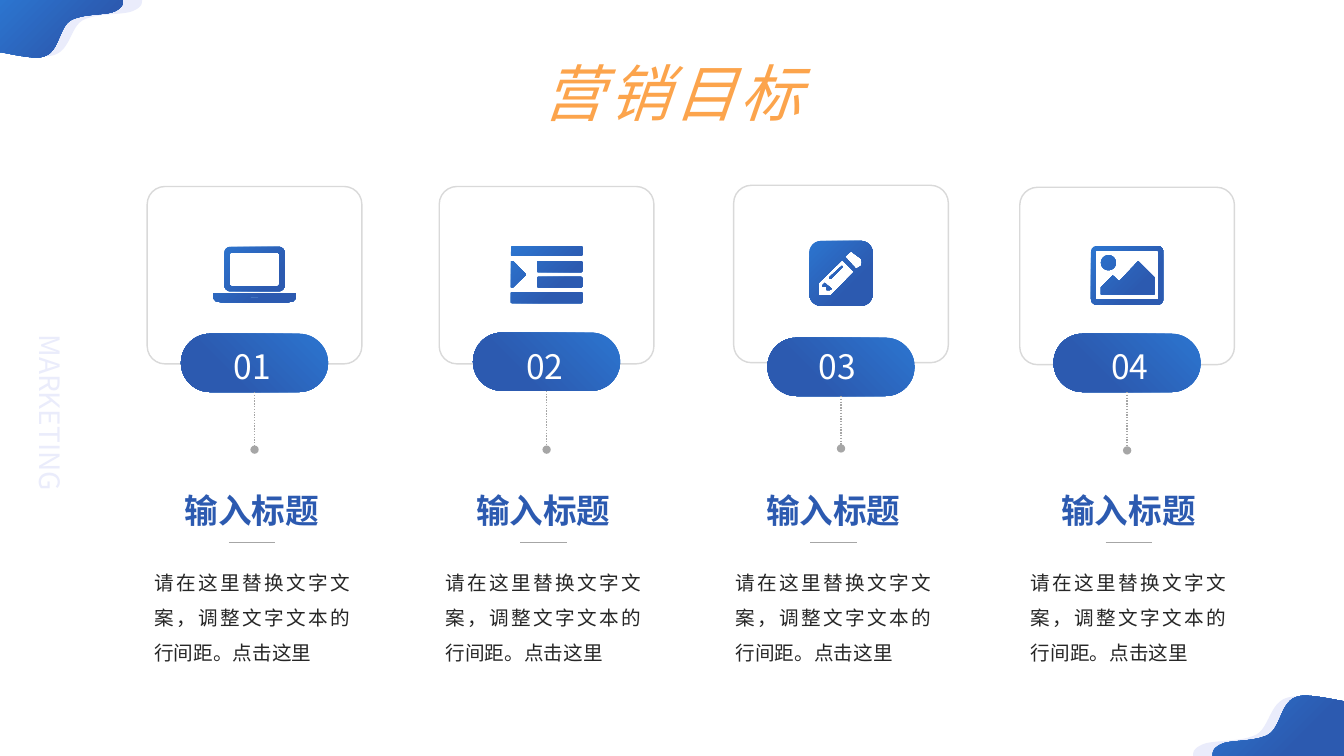
from math import cos, pi, sin

from lxml import etree
from pptx import Presentation
from pptx.dml.color import RGBColor
from pptx.enum import dml, shapes, text
from pptx.oxml import ns
from pptx.util import Cm, Pt

FONT = "Noto Sans CJK SC"
SKY = RGBColor(0x2C, 0x75, 0xCF)
BLUE = RGBColor(0x2C, 0x5A, 0xB0)
PALE = RGBColor(0xEA, 0xEC, 0xFB)
ORANGE = RGBColor(0xFC, 0xA4, 0x4C)
BODY = RGBColor(0x26, 0x26, 0x26)
WHITE = RGBColor(0xFF, 0xFF, 0xFF)
CARD_LINE = RGBColor(0xD9, 0xD9, 0xD9)
GREY = RGBColor(0xA6, 0xA6, 0xA6)

CARD_WIDTH, CARD_HEIGHT = 5.41, 4.47
PILL_WIDTH, PILL_HEIGHT = 3.71, 1.47
NUMBER_LEFT, NUMBER_PITCH = 5.36, 7.37

# Corner wave in a unit box: start point, then cubic curves of three points
WAVE_START = (1, 0.02)
WAVE_CURVES = [
    [(1, 0.08), (0.99, 0.14), (0.93, 0.2)],
    [(0.86, 0.27), (0.67, 0.23), (0.57, 0.36)],
    [(0.48, 0.49), (0.48, 0.9), (0.36, 0.98)],
    [(0.34, 0.99), (0.33, 1), (0.3, 1)],
    [(0.22, 1), (0.11, 0.95), (0.01, 0.91)],
]


def rounded(left, top, right, bottom, radius):
    """Contour of a rectangle with rounded corners."""
    corners = [(right - radius, bottom - radius), (left + radius, bottom - radius),
               (left + radius, top + radius), (right - radius, top + radius)]
    return [(x + radius * cos((quarter + step / 6) * pi / 2),
             y + radius * sin((quarter + step / 6) * pi / 2))
            for quarter, (x, y) in enumerate(corners) for step in range(7)]


# Icon contours in cm, measured from the icon's centre
LAPTOP = [
    [(-1.04, 0.47), (1.04, 0.47), (1.04, 0.6), (0.98, 0.67), (0.84, 0.7),
     (-0.84, 0.7), (-0.98, 0.67), (-1.04, 0.6)],
    rounded(-0.76, -0.7, 0.76, 0.42, 0.15),
    rounded(-0.62, -0.55, 0.62, 0.29, 0.04),
    rounded(-0.11, 0.57, 0.11, 0.6, 0.01),
]
INDENT = [
    rounded(-0.9, -0.72, 0.9, -0.47, 0.03),
    rounded(-0.9, 0.44, 0.9, 0.72, 0.03),
    rounded(-0.24, -0.34, 0.9, -0.06, 0.03),
    rounded(-0.24, 0.06, 0.9, 0.32, 0.03),
    [(-0.9, -0.34), (-0.84, -0.34), (-0.53, -0.02), (-0.53, 0.02),
     (-0.84, 0.32), (-0.9, 0.32)],
]
PENCIL = [
    rounded(-0.8, -0.82, 0.8, 0.82, 0.3),
    [(0.33, -0.04), (0.03, -0.34), (-0.56, 0.24), (-0.56, 0.55), (-0.25, 0.55)],
    [(-0.23, 0.39), (-0.28, 0.42), (-0.36, 0.42), (-0.36, 0.34),
     (-0.46, 0.34), (-0.46, 0.29), (-0.41, 0.24)],
    [(0.05, -0.17), (-0.25, 0.14), (-0.3, 0.14), (-0.3, 0.1), (0.02, -0.19)],
    [(0.51, -0.19), (0.53, -0.28), (0.51, -0.37), (0.33, -0.5), (0.26, -0.56),
     (0.18, -0.5), (0.1, -0.42), (0.38, -0.11)],
]
LANDSCAPE = [
    rounded(-0.91, -0.74, 0.91, 0.74, 0.14),
    rounded(-0.79, -0.62, 0.79, 0.61, 0.03),
    rounded(-0.66, -0.51, -0.28, -0.13, 0.19),
    [(0.69, 0.48), (-0.66, 0.48), (-0.66, 0.3), (-0.36, 0), (-0.2, 0.15),
     (0.28, -0.36), (0.69, 0.05)],
]

# Icon, card left, card top, pill top, text left
COLUMNS = [
    (LAPTOP, 3.71, 4.7, 8.41, 3.89),
    (INDENT, 11.07, 4.7, 8.38, 11.23),
    (PENCIL, 18.49, 4.67, 8.51, 18.54),
    (LANDSCAPE, 25.7, 4.72, 8.41, 25.98),
]


def fill_gradient(shape, angle):
    shape.fill.gradient()
    shape.fill.gradient_angle = angle
    for stop, position, color in zip(shape.fill.gradient_stops, (0, 0.7), (SKY, BLUE)):
        stop.position = position
        stop.color.rgb = color


def add_outline(slide, contours, left, top):
    """Freeform of closed contours in cm; inner contours cut holes."""
    placed = [[(Cm(left + x), Cm(top + y)) for x, y in contour] for contour in contours]
    builder = slide.shapes.build_freeform(*placed[0][0])
    for index, points in enumerate(placed):
        if index:
            builder.move_to(*points[0])
        builder.add_line_segments(points[1:], close=True)
    shape = builder.convert_to_shape()
    shape.shadow.inherit = False
    shape.line.fill.background()
    return shape


def add_wave(slide, left, top, width, height, turned=False):
    points = [(0, 0), WAVE_START]
    points.insert(1, (1, 0))
    for a, b, c in WAVE_CURVES:
        start = points[-1]
        for step in range(1, 13):
            t = step / 12
            weights = ((1 - t) ** 3, 3 * t * (1 - t) ** 2, 3 * t * t * (1 - t), t ** 3)
            points.append(tuple(sum(w * p[axis] for w, p in zip(weights, (start, a, b, c)))
                                for axis in (0, 1)))
    points.append((0, 0.91))
    if turned:
        points = [(1 - x, 1 - y) for x, y in points]
    return add_outline(slide, [[(x * width, y * height) for x, y in points]], left, top)


def add_round_box(slide, left, top, width, height, radius):
    shape = slide.shapes.add_shape(shapes.MSO_SHAPE.ROUNDED_RECTANGLE,
                                   Cm(left), Cm(top), Cm(width), Cm(height))
    shape.adjustments[0] = radius
    shape.shadow.inherit = False
    return shape


def add_line(slide, x1, y1, x2, y2):
    line = slide.shapes.add_connector(shapes.MSO_CONNECTOR.STRAIGHT,
                                      Cm(x1), Cm(y1), Cm(x2), Cm(y2))
    line.line.color.rgb = GREY
    line.line.width = Pt(1)
    etree.SubElement(line._element.spPr, ns.qn("a:effectLst"))
    return line


def write(shape, words, size, color, align=text.PP_ALIGN.CENTER,
          anchor=text.MSO_ANCHOR.MIDDLE, margin=0):
    frame = shape.text_frame
    frame.text = words
    frame.word_wrap = True
    frame.vertical_anchor = anchor
    frame.margin_left = frame.margin_right = Cm(margin)
    frame.margin_top = frame.margin_bottom = Cm(margin / 2)
    paragraph = frame.paragraphs[0]
    paragraph.alignment = align
    run = paragraph.runs[0]
    run.font.name = FONT
    run.font.size = Pt(size)
    run.font.color.rgb = color
    etree.SubElement(run.font._element, ns.qn("a:ea"), typeface=FONT)
    return paragraph


def add_text(slide, left, top, width, height, *style, **options):
    box = slide.shapes.add_textbox(Cm(left), Cm(top), Cm(width), Cm(height))
    return box, write(box, *style, **options)


def add_title(slide, words):
    title = slide.shapes.title
    title.left, title.top, title.width, title.height = Cm(11.02), Cm(1.27), Cm(11.84), Cm(1.96)
    paragraph = write(title, words, 44, ORANGE, anchor=text.MSO_ANCHOR.TOP, margin=0.25)
    font = paragraph.runs[0].font
    font.italic = True
    font._element.set("spc", "300")


def add_card(slide, icon, left, top, pill_top):
    card = add_round_box(slide, left, top, CARD_WIDTH, CARD_HEIGHT, 0.1)
    card.fill.background()
    card.line.color.rgb = CARD_LINE
    card.line.width = Pt(1)
    middle = left + CARD_WIDTH / 2
    pill = add_round_box(slide, middle - PILL_WIDTH / 2, pill_top, PILL_WIDTH, PILL_HEIGHT, 0.5)
    fill_gradient(pill, 225)
    pill.line.fill.background()
    stem = add_line(slide, middle, pill_top + PILL_HEIGHT, middle, top + 6.63)
    stem.begin_connect(pill, 2)
    stem.line.dash_style = dml.MSO_LINE.ROUND_DOT
    etree.SubElement(stem.line._get_or_add_ln(), ns.qn("a:tailEnd"), type="oval")
    fill_gradient(add_outline(slide, icon, middle, top + 2.22), 315)


def add_caption(slide, left):
    _, heading = add_text(slide, left + 0.53, 12.34, 3.86, 1.02, "输入标题", 24, BLUE)
    heading.runs[0].font.bold = True
    _, body = add_text(slide, left, 14.12, 4.93, 2.59,
                       "请在这里替换文字文案，调整文字文本的行间距。点击这里", 14, BODY,
                       align=text.PP_ALIGN.JUSTIFY)
    body.line_spacing = 1.5
    add_line(slide, left + 1.88, 13.67, left + 3.05, 13.67)


def main():
    presentation = Presentation()
    presentation.slide_width, presentation.slide_height = Cm(33.87), Cm(19.05)
    slide = presentation.slides.add_slide(presentation.slide_layouts[5])

    for pale, blue, turned in [
        ((30.07, 17.55, 3.71, 1.5), (30.56, 17.53, 3.31, 1.52), True),
        ((0.1, 0, 3.48, 1.42), (0, 0, 3.1, 1.45), False),
    ]:
        back = add_wave(slide, *pale, turned)
        back.fill.solid()
        back.fill.fore_color.rgb = PALE
        fill_gradient(add_wave(slide, *blue, turned), 315)

    side_label, _ = add_text(slide, -1.22, 9.89, 5, 1.02, "MARKETING", 20, PALE)
    side_label.rotation = 90
    add_title(slide, "营销目标")
    for index, (icon, left, top, pill_top, text_left) in enumerate(COLUMNS):
        add_card(slide, icon, left, top, pill_top)
        add_caption(slide, text_left)
        add_text(slide, NUMBER_LEFT + index * NUMBER_PITCH, 8.71, 2.01, 1.02,
                 f"{index + 1:02}", 24, WHITE)
    presentation.save("out.pptx")


if __name__ == "__main__":
    main()
